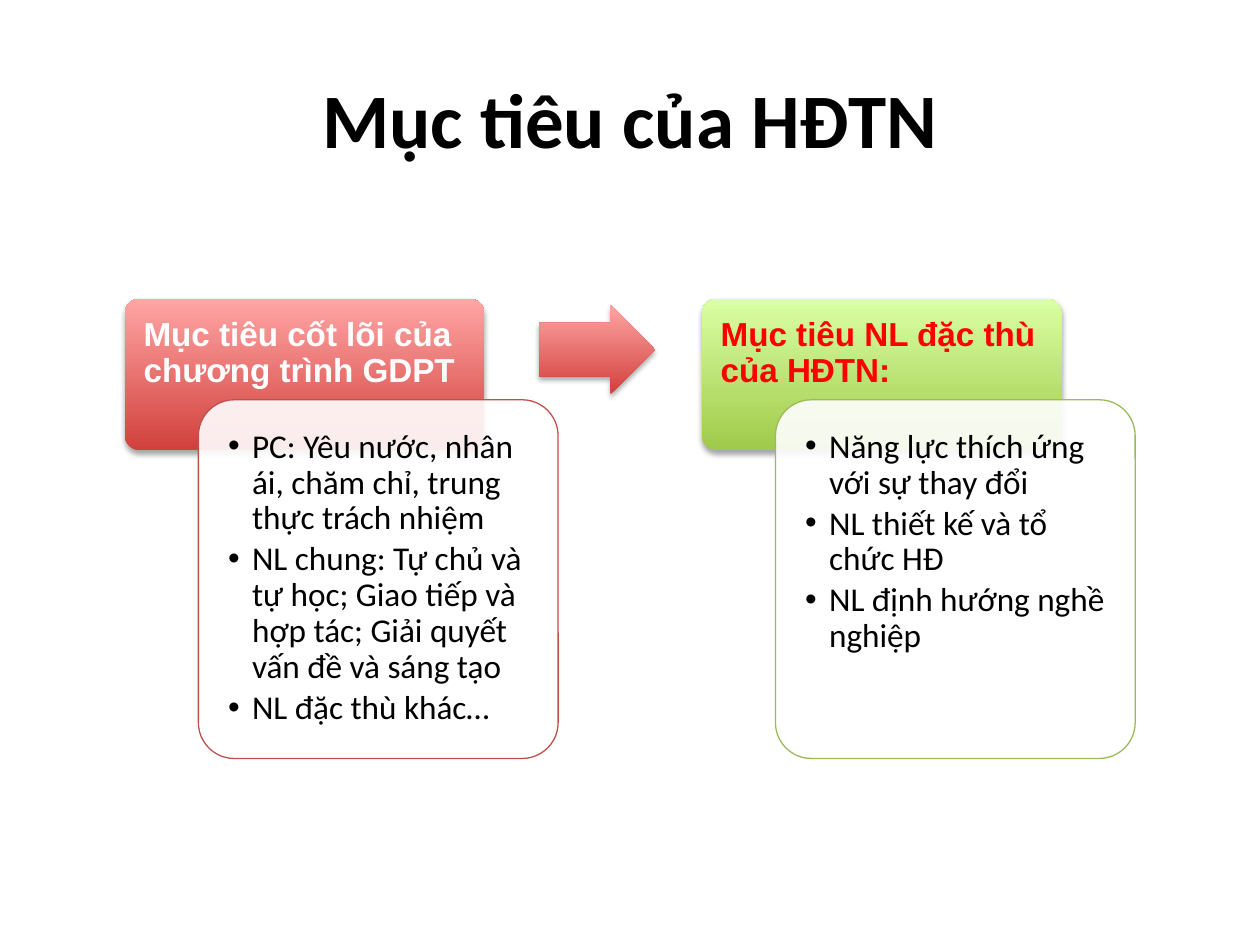
from lxml.etree import SubElement as Sub
from pptx import Presentation
from pptx.dml.color import RGBColor as Rgb
from pptx.enum.shapes import MSO_SHAPE as Kind
from pptx.enum.text import MSO_ANCHOR as Anchor, PP_ALIGN as Align
from pptx.oxml.ns import qn
from pptx.util import Inches, Pt

WIDE, HIGH = 10, 7.5
BLACK = Rgb(0x00, 0x00, 0x00)
WHITE = Rgb(0xFF, 0xFF, 0xFF)
RED = Rgb(0xFF, 0x00, 0x00)
ROSE = (Rgb(0xD1, 0x40, 0x3C), Rgb(0xFF, 0xA6, 0xA5))
LIME = (Rgb(0xA0, 0xCA, 0x4A), Rgb(0xDA, 0xFF, 0xA5))
BRICK = Rgb(0xC0, 0x50, 0x4D)
OLIVE = Rgb(0x9B, 0xBB, 0x59)

HEAD = {"name": "Arial", "size": Pt(19), "bold": True}
BODY = {"name": "Calibri", "size": Pt(19)}
TITLE = {"name": "Calibri", "size": Pt(44), "bold": True}

CARDS = [
    ((0.99, 2.37, 3.44, 3.65), ROSE, BRICK, WHITE,
     "Mục tiêu cốt lõi của chương trình GDPT",
     ["PC: Yêu nước, nhân ái, chăm chỉ, trung thực trách nhiệm",
      "NL chung: Tự chủ và tự học; Giao tiếp và hợp tác; "
      "Giải quyết vấn đề và sáng tạo",
      "NL đặc thù khác…"]),
    ((5.57, 2.37, 3.44, 3.65), LIME, OLIVE, RED,
     "Mục tiêu NL đặc thù của HĐTN:",
     ["Năng lực thích ứng với sự thay đổi",
      "NL thiết kế và tổ chức HĐ",
      "NL định hướng nghề nghiệp"]),
]


def part(box, x, y, w, h):
    """Return the part of a box given by shares of its sides."""
    left, top, wide, high = box
    return left + x * wide, top + y * high, w * wide, h * high


def style(font, looks, color):
    """Set font attributes and colour."""
    for key, value in looks.items():
        setattr(font, key, value)
    font.color.rgb = color


def add_form(slide, kind, box, *adjust):
    """Add a preset shape without shadow."""
    form = slide.shapes.add_shape(kind, *map(Inches, box))
    form.shadow.inherit = False
    for i, value in enumerate(adjust):
        form.adjustments[i] = value
    return form


def add_glow(slide, kind, box, tones, *adjust):
    """Add a shape with an upward gradient and a soft drop shadow."""
    form = add_form(slide, kind, box, *adjust)
    form.line.fill.background()
    form.fill.gradient()
    form.fill.gradient_angle = 90
    for stop, tone, place in zip(form.fill.gradient_stops, tones, (0, 1)):
        stop.color.rgb = tone
        stop.position = place
    effects = form.element.spPr.find(qn("a:effectLst"))
    shade = Sub(effects, qn("a:outerShdw"), blurRad="40000", dist="23000",
                dir="5400000", rotWithShape="0")
    tint = Sub(shade, qn("a:srgbClr"), val="000000")
    Sub(tint, qn("a:alpha"), val="35000")


def add_text(slide, box, lines, looks, color, foot, after, dots=False):
    """Add wrapped lines of text, with bullets if asked."""
    frame = slide.shapes.add_textbox(*map(Inches, box)).text_frame
    frame.word_wrap = True
    for side in ("left", "top", "right"):
        setattr(frame, f"margin_{side}", Inches(0.15))
    frame.margin_bottom = Inches(foot)
    frame.text = "\n".join(lines)
    for para in frame.paragraphs:
        para.line_spacing = 0.9
        para.space_after = Pt(after)
        style(para.runs[0].font, looks, color)
        if dots:
            para.level = 1
            props = para._p.get_or_add_pPr()
            props.set("marL", str(Inches(0.19)))
            props.set("indent", str(-Inches(0.19)))
            Sub(props, qn("a:buFont"), typeface="Arial")
            Sub(props, qn("a:buChar"), char="•")


def add_card(slide, box, tones, edge, ink, head, items):
    """Place a coloured heading with an overlapping list panel."""
    add_glow(slide, Kind.ROUNDED_RECTANGLE, part(box, 0, 0, 0.83, 0.33),
             tones, 0.1)
    add_text(slide, part(box, 0, 0, 0.83, 0.22), [head], HEAD, ink, 0.08, 6.65)
    panel = part(box, 0.17, 0.22, 0.83, 0.78)
    form = add_form(slide, Kind.ROUNDED_RECTANGLE, panel, 0.1)
    form.fill.solid()
    form.fill.fore_color.rgb = WHITE
    tint = form.element.spPr.find(qn("a:solidFill"))[0]
    Sub(tint, qn("a:alpha"), val="90000")
    form.line.color.rgb = edge
    form.line.width = Pt(0.75)
    add_text(slide, part(panel, 0.03, 0.03, 0.94, 0.94), items, BODY, BLACK,
             0.15, 2.85, True)


def add_title(slide, box, text):
    """Fill and place the title."""
    title = slide.shapes.title
    for key, value in zip(("left", "top", "width", "height"), box):
        setattr(title, key, Inches(value))
    frame = title.text_frame
    frame.text = text
    frame.vertical_anchor = Anchor.MIDDLE
    para = frame.paragraphs[0]
    para.alignment = Align.CENTER
    style(para.runs[0].font, TITLE, BLACK)


def main():
    """Build and save the slide."""
    deck = Presentation()
    deck.slide_width, deck.slide_height = Inches(WIDE), Inches(HIGH)
    slide = deck.slides.add_slide(deck.slide_layouts[5])
    page = (0, 0, WIDE, HIGH)
    add_title(slide, part(page, 0.05, 0.04, 0.9, 0.17), "Mục tiêu của HĐTN")
    first, last = CARDS
    add_card(slide, *first)
    add_glow(slide, Kind.RIGHT_ARROW, (4.28, 2.42, 0.92, 0.71), ROSE, 0.6, 0.5)
    add_card(slide, *last)
    deck.save("out.pptx")


if __name__ == "__main__":
    main()
